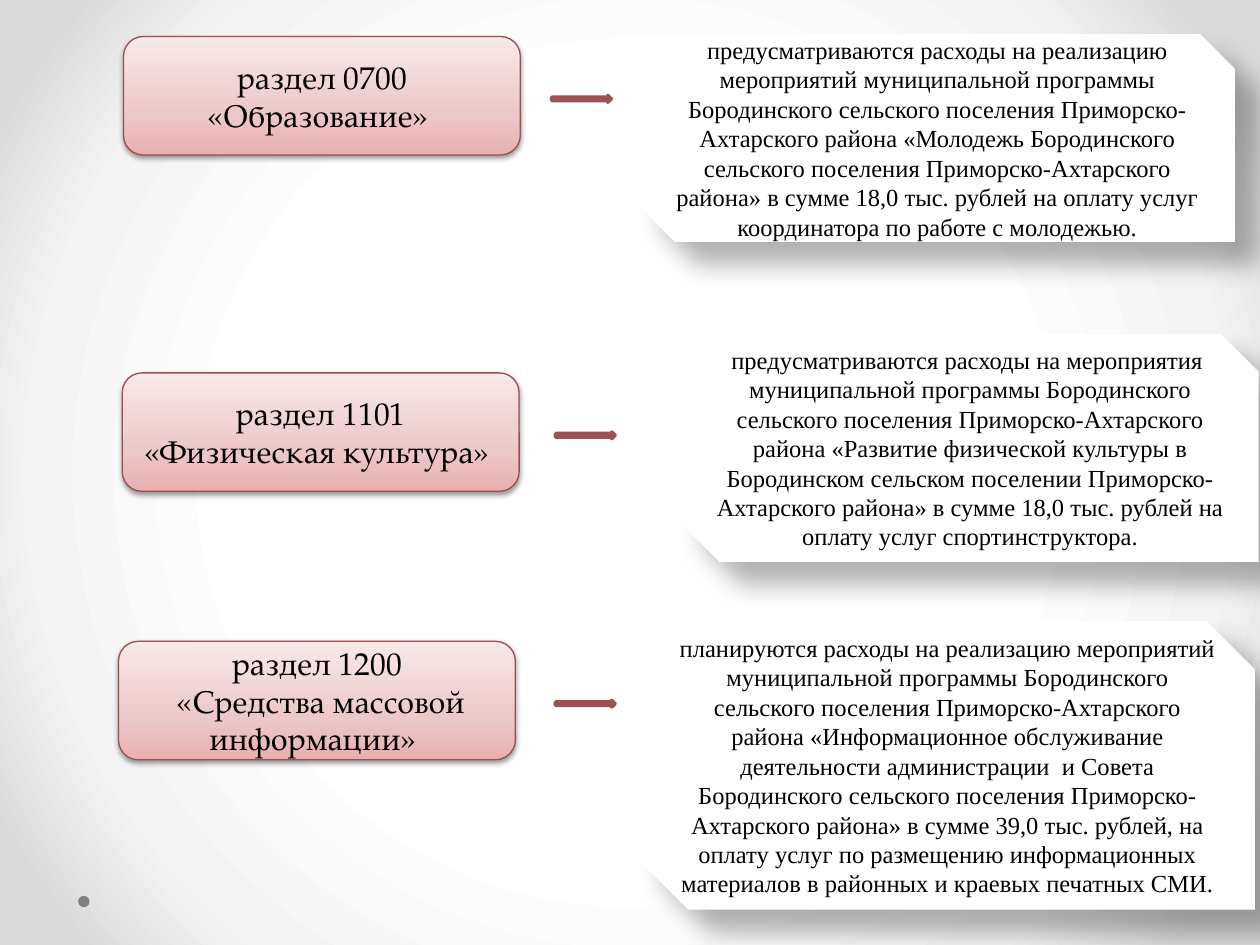
from pptx import Presentation, util as u
from pptx.dml.color import RGBColor
from pptx.enum import shapes, text
from pptx.oxml import parse_xml
from pptx.oxml.ns import nsdecls

# Content: one budget section per row
SECTIONS = [
    dict(label=["раздел 0700 «Образование» "],
         note="предусматриваются расходы на реализацию мероприятий муниципальной программы "
              "Бородинского сельского поселения Приморско-Ахтарского района «Молодежь "
              "Бородинского сельского поселения Приморско-Ахтарского района» в сумме 18,0 тыс. "
              "рублей на оплату услуг координатора по работе с молодежью."),
    dict(label=["раздел 1101 «Физическая культура» "],
         note="предусматриваются расходы на мероприятия  муниципальной программы Бородинского "
              "сельского поселения Приморско-Ахтарского района «Развитие физической культуры в "
              "Бородинском сельском поселении Приморско-Ахтарского района» в сумме 18,0 тыс. "
              "рублей на оплату услуг спортинструктора."),
    dict(label=["раздел 1200", " «Средства массовой информации» "],
         note="планируются расходы на реализацию мероприятий муниципальной программы "
              "Бородинского сельского поселения Приморско-Ахтарского района «Информационное "
              "обслуживание деятельности администрации  и Совета Бородинского сельского "
              "поселения Приморско-Ахтарского района» в сумме 39,0 тыс. рублей, на оплату услуг "
              "по размещению информационных материалов в районных и краевых печатных СМИ."),
]

# Layout in inches: row centre, left edges of label and arrow, note box
ROWS = [
    dict(mid=0.76, label=0.98, arrow=4.38, note=(5.08, 0.27, 4.72, 1.65)),
    dict(mid=3.43, label=0.97, arrow=4.41, note=(5.41, 2.65, 4.58, 1.81)),
    dict(mid=5.56, label=0.94, arrow=4.41, note=(5.08, 4.93, 4.88, 2.29)),
]
LABEL_W, LABEL_H = 3.15, 0.94
ARROW_W, ARROW_H = 0.47, 0.05
DOT = (0.62, 7.11, 0.09, 0.09)

THEME = dict(
    backdrop=[(50, "FFFFFF"), (76, "F4F4F4"), (92, "DADADA")],
    label_fill=[(0, "E8B0B0"), (35, "EDC8C8"), (100, "F9E9E9")],
    label_line=("9A4E4E", 0.75), arrow_line=("9C5252", 2.25),
    white="FFFFFF", dot="808080", ink="000000",
    label_font=dict(name="TeX Gyre Pagella", size=u.Pt(18)),
    note_font=dict(name="Times New Roman", size=u.Pt(14)),
    # opacity %, blur pt, distance pt, direction in degrees
    label_shadow=(38, 3.1, 1.6, 90), note_shadow=(30, 15, 18, 45),
)


def gradient(stops, direction):
    gs = "".join(f'<a:gs pos="{pos * 1000}"><a:srgbClr val="{c}"/></a:gs>' for pos, c in stops)
    return (f'<a:gradFill {nsdecls("a")} rotWithShape="1"><a:gsLst>{gs}</a:gsLst>'
            f'{direction}</a:gradFill>')


def add_shape(s, kind, box, fill, line=None, shadow=None):
    sp = s.shapes.add_shape(kind, *(u.Inches(v) for v in box))
    sp.shadow.inherit = False
    if isinstance(fill, list):
        sp._element.spPr.find("{*}prstGeom").addnext(
            parse_xml(gradient(fill, '<a:lin ang="16200000" scaled="0"/>')))
    else:
        sp.fill.solid()
        sp.fill.fore_color.rgb = RGBColor.from_string(fill)
    if line:
        sp.line.color.rgb = RGBColor.from_string(line[0])
        sp.line.width = u.Pt(line[1])
    else:
        sp.line.fill.background()
    if shadow:
        alpha, blur, dist, angle = shadow
        sp._element.spPr.find("{*}effectLst").append(parse_xml(
            f'<a:outerShdw {nsdecls("a")} blurRad="{u.Pt(blur)}" dist="{u.Pt(dist)}" '
            f'dir="{angle * 60000}" algn="tl" rotWithShape="0"><a:srgbClr val="{THEME["ink"]}">'
            f'<a:alpha val="{alpha * 1000}"/></a:srgbClr></a:outerShdw>'))
    return sp


def write(sp, lines, font):
    tf = sp.text_frame
    tf.word_wrap = True
    tf.vertical_anchor = text.MSO_ANCHOR.MIDDLE
    for i, line in enumerate(lines):
        p = tf.add_paragraph() if i else tf.paragraphs[0]
        p.alignment = text.PP_ALIGN.CENTER
        r = p.add_run()
        r.text = line
        for key, value in font.items():
            setattr(r.font, key, value)
        r.font.color.rgb = RGBColor.from_string(THEME["ink"])


def main():
    prs = Presentation()
    prs.slide_width, prs.slide_height = u.Inches(10), u.Inches(7.5)
    s = prs.slides.add_slide(prs.slide_layouts[6])
    kinds = shapes.MSO_SHAPE

    # Radial backdrop and corner dot
    radial = ('<a:path path="circle"><a:fillToRect l="50000" t="50000" r="50000" b="50000"/>'
              '</a:path>')
    s._element.cSld.insert(0, parse_xml(
        f'<p:bg {nsdecls("p", "a")}><p:bgPr>{gradient(THEME["backdrop"], radial)}'
        '<a:effectLst/></p:bgPr></p:bg>'))
    add_shape(s, kinds.OVAL, DOT, THEME["dot"])

    # Label, note and arrow of each section
    for section, row in zip(SECTIONS, ROWS):
        label = add_shape(s, kinds.ROUNDED_RECTANGLE,
                          (row["label"], row["mid"] - LABEL_H / 2, LABEL_W, LABEL_H),
                          THEME["label_fill"], THEME["label_line"], THEME["label_shadow"])
        write(label, section["label"], THEME["label_font"])
        note = add_shape(s, kinds.SNIP_2_DIAG_RECTANGLE, row["note"], THEME["white"],
                         shadow=THEME["note_shadow"])
        write(note, [section["note"]], THEME["note_font"])
        add_shape(s, kinds.RIGHT_ARROW, (row["arrow"], row["mid"], ARROW_W, ARROW_H),
                  THEME["white"], THEME["arrow_line"])

    prs.save("out.pptx")


if __name__ == "__main__":
    main()
